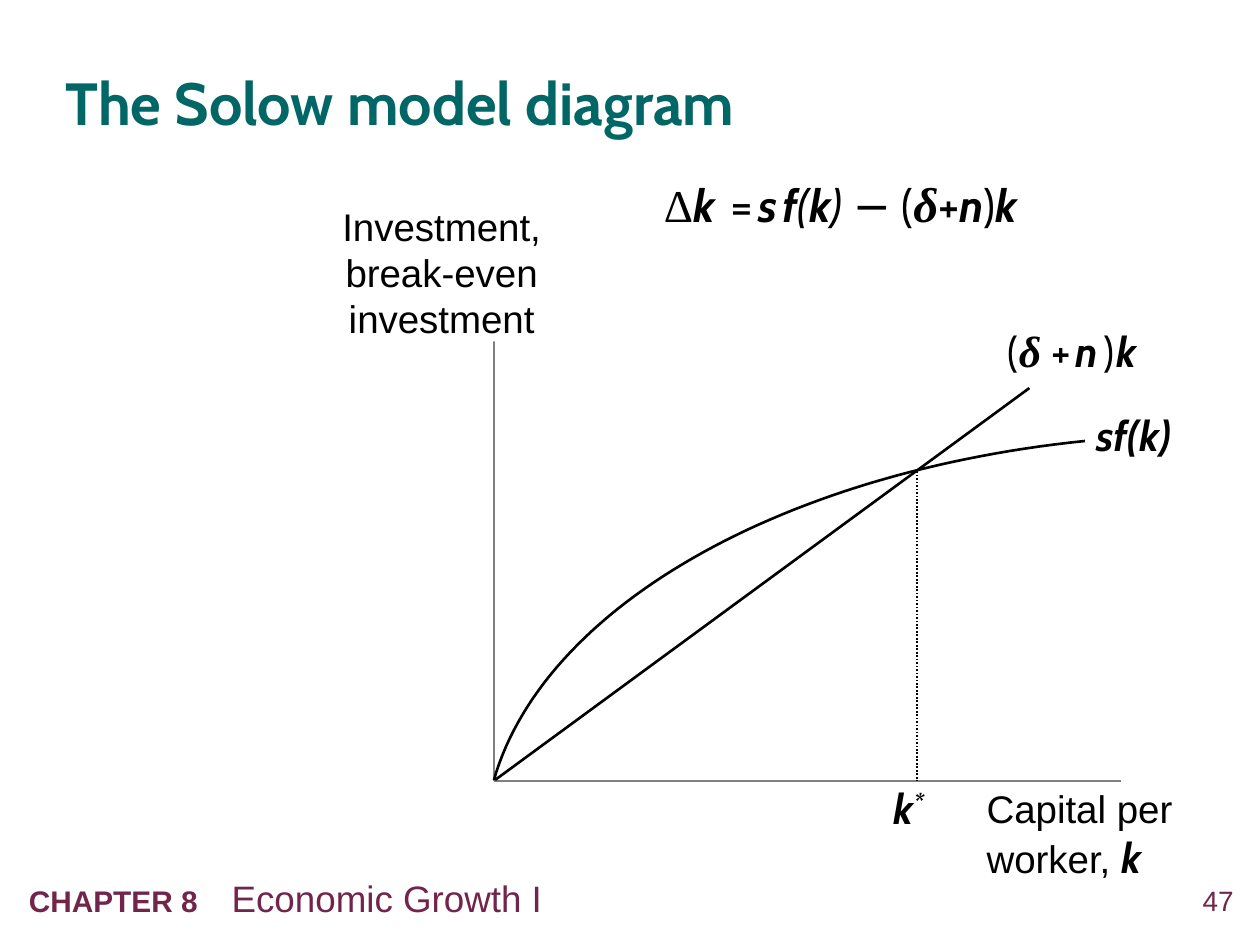
from lxml import etree
from pptx import Presentation
from pptx.dml.color import RGBColor
from pptx.enum.dml import MSO_LINE
from pptx.enum.shapes import MSO_CONNECTOR, MSO_SHAPE
from pptx.enum.text import MSO_ANCHOR, MSO_AUTO_SIZE, PP_ALIGN
from pptx.oxml.ns import qn
from pptx.util import Inches, Pt

STRAIGHT, RECTANGLE = MSO_CONNECTOR.STRAIGHT, MSO_SHAPE.RECTANGLE
DOTTED = MSO_LINE.ROUND_DOT
TOP, MIDDLE = MSO_ANCHOR.TOP, MSO_ANCHOR.MIDDLE
LEFT, CENTER, RIGHT = PP_ALIGN.LEFT, PP_ALIGN.CENTER, PP_ALIGN.RIGHT
GROW = MSO_AUTO_SIZE.SHAPE_TO_FIT_TEXT
ARIAL, CABIN, TIMES = "Arial", "Cabin", "Times New Roman"
COLORS = {"ink": "000000", "axis": "808080", "paper": "FFFFFF",
          "title": "006666", "footer": "71254B"}
NO_INSETS, DEFAULT_INSETS = (0, 0, 0, 0), (0.1, 0.05, 0.1, 0.05)


def color(name):
    return RGBColor.from_string(COLORS[name])


class SlideBuilder:
    """Holds the current slide and draws each kind of element on it."""

    def __init__(self, slide):
        self.slide = slide

    def add_runs(self, para, runs, ink):
        """Add runs of (text, size, font, flags); flags: b bold, i italic, ^ raised."""
        for text, size, font, flags in runs:
            if text == "\n":
                para.add_line_break()
                continue
            span = para.add_run()
            span.text = text
            span.font.size = Pt(size)
            span.font.name = font
            span.font.bold = "b" in flags
            span.font.italic = "i" in flags
            span.font.color.rgb = color(ink)
            if "^" in flags:
                span.font._element.set("baseline", "30000")

    def title(self, place, text):
        box = self.slide.shapes.title
        box.left, box.top, box.width, box.height = map(Inches, place)
        self.frame(box, NO_INSETS, MIDDLE)
        para = box.text_frame.paragraphs[0]
        para.alignment = LEFT
        para.line_spacing = 1.05
        self.add_runs(para, [(text, 34, CABIN, "b")], "title")

    def frame(self, box, insets, anchor):
        frame = box.text_frame
        frame.word_wrap = True
        frame.vertical_anchor = anchor
        (frame.margin_left, frame.margin_top,
         frame.margin_right, frame.margin_bottom) = map(Inches, insets)

    def text(self, place, runs, ink="ink", align=LEFT, insets=NO_INSETS,
             anchor=MIDDLE, grow=True, spaced=True, filled=False, alpha=None, tab=None):
        place = map(Inches, place)
        if filled:
            box = self.slide.shapes.add_shape(RECTANGLE, *place)
            box.shadow.inherit = False
            box.line.fill.background()
            box.fill.solid()
            box.fill.fore_color.rgb = color("paper")
            if alpha:
                tint = box._element.spPr.find(qn("a:solidFill"))[0]
                etree.SubElement(tint, qn("a:alpha")).set("val", str(alpha * 1000))
        else:
            box = self.slide.shapes.add_textbox(*place)
        self.frame(box, insets, anchor)
        if grow:
            box.text_frame.auto_size = GROW
        para = box.text_frame.paragraphs[0]
        para.alignment = align
        settings = para._p.get_or_add_pPr()
        if spaced:
            before = etree.SubElement(settings, qn("a:spcBef"))
            etree.SubElement(before, qn("a:spcPct")).set("val", "50000")
        if tab:
            stops = etree.SubElement(settings, qn("a:tabLst"))
            stop = etree.SubElement(stops, qn("a:tab"))
            stop.set("pos", str(Inches(tab)))
            stop.set("algn", "l")
        self.add_runs(para, runs, ink)

    def line(self, start, end, ink="ink", width=1.0, dash=None):
        connector = self.slide.shapes.add_connector(
            STRAIGHT, *map(Inches, start + end))
        connector.line.color.rgb = color(ink)
        connector.line.width = Pt(width)
        if dash:
            connector.line.dash_style = dash
        etree.SubElement(connector._element.spPr, qn("a:effectLst"))

    def curve(self, controls, width, steps=60):
        """Draw a cubic Bezier curve through its four control points."""
        points = []
        for step in range(steps + 1):
            t = step / steps
            weights = ((1 - t) ** 3, 3 * t * (1 - t) ** 2, 3 * t * t * (1 - t), t ** 3)
            points.append(tuple(
                Inches(sum(w * c for w, c in zip(weights, axis)))
                for axis in zip(*controls)))
        builder = self.slide.shapes.build_freeform(*points[0])
        builder.add_line_segments(points[1:], close=False)
        shape = builder.convert_to_shape()
        shape.shadow.inherit = False
        shape.fill.background()
        shape.line.color.rgb = color("ink")
        shape.line.width = Pt(width)


def main():
    deck = Presentation()
    deck.slide_width, deck.slide_height = Inches(10), Inches(7.5)
    page = SlideBuilder(deck.slides.add_slide(deck.slide_layouts[5]))

    page.text((9.24, 7.01, 0.55, 0.32), [("47", 16, ARIAL, "")], "footer",
              align=RIGHT, anchor=TOP, grow=False, spaced=False)
    page.text((0.13, 6.9, 8.18, 0.45),
              [("CHAPTER 8\t", 17, ARIAL, "b"), ("Economic Growth I", 21, ARIAL, "")],
              "footer", insets=DEFAULT_INSETS, anchor=TOP, spaced=False, tab=1.61)
    page.title((0.52, 0.34, 7.87, 0.9), "The Solow model diagram")

    # Axes and their labels
    origin = (3.92, 6.2)
    page.line((3.92, 2.37), origin, "axis")
    page.line(origin, (8.9, 6.2), "axis")
    page.text((2.5, 1.61, 2.01, 1.1),
              [("Investment, break-even investment", 22, ARIAL, "")],
              align=CENTER, filled=True)
    page.text((7.83, 6.23, 1.75, 0.77),
              [("Capital per", 22, ARIAL, ""), ("\n", 22, ARIAL, ""),
               ("worker, ", 22, ARIAL, ""), ("k", 24, CABIN, "bi")])

    # Investment curve
    page.curve([(8.61, 3.5), (6.18, 3.75), (4.31, 4.83), (3.92, 6.19)], 1.5)
    page.text((8.7, 3.25, 1.04, 0.4), [("sf(k)", 24, CABIN, "bi")])

    # Break-even line
    page.text((8, 2.57, 1.5, 0.42), [
        ("(", 24, CABIN, ""), ("δ", 25, TIMES, "bi"), (" ", 24, TIMES, "bi"),
        ("+", 24, CABIN, ""), (" ", 12, CABIN, ""), ("n", 24, CABIN, "bi"),
        (" ", 12, CABIN, ""), (")", 24, CABIN, ""), (" ", 6, CABIN, ""),
        ("k", 24, CABIN, "bi")])
    page.line((3.93, 6.19), (8.17, 3.08), width=1.5)

    # Steady state
    page.text((7.09, 6.21, 0.58, 0.5),
              [("k", 24, CABIN, "bi"), ("*", 24, CABIN, "bi^")],
              insets=(0, 0, 0, 0.1))
    page.line((7.28, 3.74), (7.28, 6.2), dash=DOTTED)

    # Equation of motion
    page.text((5.17, 1.33, 3.92, 0.57), [
        ("Δ", 26, TIMES, ""), ("k ", 26, CABIN, "bi"), (" ", 13, CABIN, ""),
        ("=", 26, CABIN, ""), (" ", 13, CABIN, ""), ("s", 26, CABIN, "bi"),
        (" ", 12, CABIN, "bi"), ("f", 26, CABIN, "bi"), ("(", 26, CABIN, "i"),
        ("k", 26, CABIN, "bi"), (") ", 26, CABIN, "i"), ("− (", 26, CABIN, ""),
        ("δ", 28, TIMES, "bi"), ("+", 26, CABIN, ""), ("n", 26, CABIN, "bi"),
        (")", 26, CABIN, ""), ("k", 26, CABIN, "bi")],
        insets=DEFAULT_INSETS, anchor=TOP, filled=True, alpha=50)

    deck.save("out.pptx")


if __name__ == "__main__":
    main()
